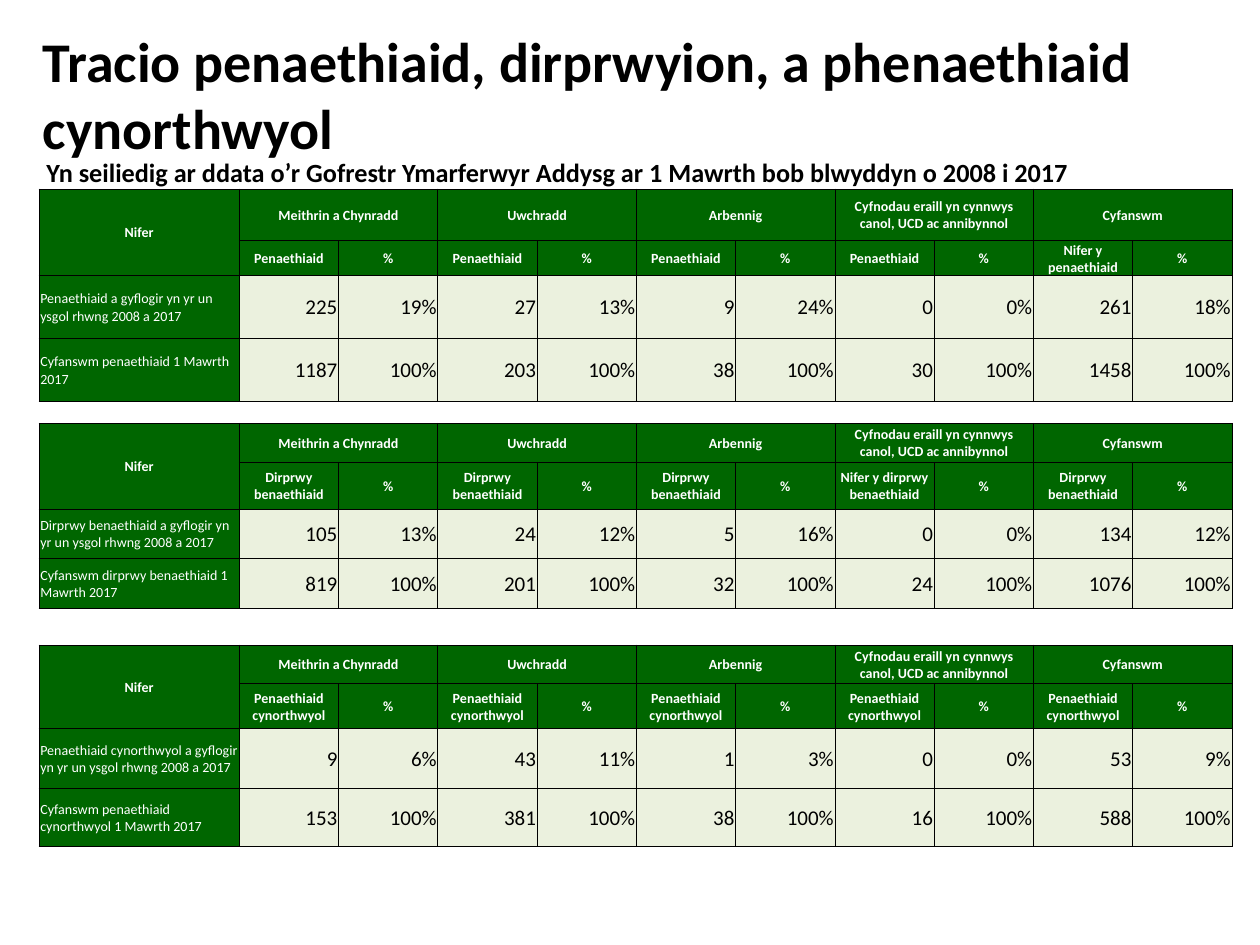
import lxml.etree
import pptx
import pptx.dml.color
import pptx.enum.text
import pptx.oxml.ns
import pptx.util

RGBColor = pptx.dml.color.RGBColor
ALIGN = pptx.enum.text.PP_ALIGN
ANCHOR = pptx.enum.text.MSO_ANCHOR
qn = pptx.oxml.ns.qn

BLACK = RGBColor(0x00, 0x00, 0x00)
WHITE = RGBColor(0xFF, 0xFF, 0xFF)
GREEN = RGBColor(0x00, 0x66, 0x00)
PALE = RGBColor(0xEB, 0xF1, 0xDE)

SECTORS = ["Meithrin a Chynradd", "Uwchradd", "Arbennig",
           "Cyfnodau eraill yn cynnwys canol, UCD ac annibynnol", "Cyfanswm"]

TABLES = [
    (15, [4.1, 2.5, 5, 5],
     ["Penaethiaid"] * 4 + ["Nifer y penaethiaid"],
     [("Penaethiaid a gyflogir yn yr un ysgol rhwng 2008 a 2017",
       "225 19% 27 13% 9 24% 0 0% 261 18%"),
      ("Cyfanswm penaethiaid 1 Mawrth 2017",
       "1187 100% 203 100% 38 100% 30 100% 1458 100%")]),
    (33.6, [3.1, 3.7, 3.95, 3.95],
     ["Dirprwy benaethiaid"] * 3 + ["Nifer y dirprwy benaethiaid", "Dirprwy benaethiaid"],
     [("Dirprwy benaethiaid a gyflogir yn yr un ysgol rhwng 2008 a 2017",
       "105 13% 24 12% 5 16% 0 0% 134 12%"),
      ("Cyfanswm dirprwy benaethiaid 1 Mawrth 2017",
       "819 100% 201 100% 32 100% 24 100% 1076 100%")]),
    (51.2, [3.05, 3.6, 4.7, 4.65],
     ["Penaethiaid cynorthwyol"] * 5,
     [("Penaethiaid cynorthwyol a gyflogir yn yr un ysgol rhwng 2008 a 2017",
       "9 6% 43 11% 1 3% 0 0% 53 9%"),
      ("Cyfanswm penaethiaid cynorthwyol 1 Mawrth 2017",
       "153 100% 381 100% 38 100% 16 100% 588 100%")]),
]


class Deck:
    font = "Calibri"
    columns, rows = 100, 75
    left, width, label_width = 3.1, 94.7, 15.9

    def __init__(self):
        self.prs = pptx.Presentation()
        self.prs.slide_width = pptx.util.Inches(10)
        self.prs.slide_height = pptx.util.Inches(7.5)
        self.s = self.prs.slides.add_slide(self.prs.slide_layouts[6])

    def x(self, columns):
        return round(self.prs.slide_width * columns / self.columns)

    def y(self, rows):
        return round(self.prs.slide_height * rows / self.rows)

    def set_text(self, p, text, size, color, bold, align):
        p.text = text
        p.alignment = align
        p.font.name = self.font
        p.font.size = pptx.util.Pt(size)
        p.font.bold = bold
        p.font.color.rgb = color

    def heading(self, text, left, top, width, height, size, anchor):
        sp = self.s.shapes.add_textbox(self.x(left), self.y(top), self.x(width), self.y(height))
        tf = sp.text_frame
        tf.word_wrap = True
        tf.vertical_anchor = anchor
        self.set_text(tf.paragraphs[0], text, size, BLACK, True, ALIGN.LEFT)

    def border(self, cell):
        tc_pr = cell._tc.get_or_add_tcPr()
        for i, side in enumerate(("a:lnL", "a:lnR", "a:lnT", "a:lnB")):
            line = lxml.etree.Element(qn(side), w=str(pptx.util.Pt(0.5)))
            fill = lxml.etree.SubElement(line, qn("a:solidFill"))
            lxml.etree.SubElement(fill, qn("a:srgbClr"), val=str(BLACK))
            tc_pr.insert(i, line)

    def cell(self, cell, text, fill, size, color, bold, align):
        cell.margin_left = cell.margin_right = cell.margin_top = pptx.util.Inches(0.01)
        cell.margin_bottom = 0
        cell.vertical_anchor = ANCHOR.MIDDLE
        cell.fill.solid()
        cell.fill.fore_color.rgb = fill
        self.border(cell)
        self.set_text(cell.text_frame.paragraphs[0], text, size, color, bold, align)

    def table(self, top, heights, counts, body):
        value_width = (self.width - self.label_width) / (2 * len(SECTORS))
        frame = self.s.shapes.add_table(
            len(heights), 1 + 2 * len(SECTORS), self.x(self.left), self.y(top),
            self.x(self.width), self.y(sum(heights)))
        table = frame.table
        for i, column in enumerate(table.columns):
            column.width = self.x(value_width if i else self.label_width)
        for row, height in zip(table.rows, heights):
            row.height = self.y(height)

        grid = [["Nifer"], [""]]
        for sector, count in zip(SECTORS, counts):
            grid[0] += [sector, ""]
            grid[1] += [count, "%"]
        grid += [[label] + values.split() for label, values in body]

        for r, texts in enumerate(grid):
            for c, text in enumerate(texts):
                if r < 2:
                    style = GREEN, 8, WHITE, True, ALIGN.CENTER
                elif c == 0:
                    style = GREEN, 8, WHITE, False, ALIGN.LEFT
                else:
                    style = PALE, 12, BLACK, False, ALIGN.RIGHT
                self.cell(table.cell(r, c), text, *style)

        table.cell(0, 0).merge(table.cell(1, 0))
        for c in range(1, len(grid[0]), 2):
            table.cell(0, c).merge(table.cell(0, c + 1))


def main():
    deck = Deck()
    deck.heading("Tracio penaethiaid, dirprwyion, a phenaethiaid cynorthwyol",
                 2.4, 1.2, 96.1, 12.5, 32, ANCHOR.MIDDLE)
    deck.heading("Yn seiliedig ar ddata o’r Gofrestr Ymarferwyr Addysg ar 1 Mawrth "
                 "bob blwyddyn o 2008 i 2017",
                 2.7, 11.9, 96.1, 3.5, 15, ANCHOR.TOP)
    for table in TABLES:
        deck.table(*table)
    deck.prs.save("out.pptx")


if __name__ == "__main__":
    main()
